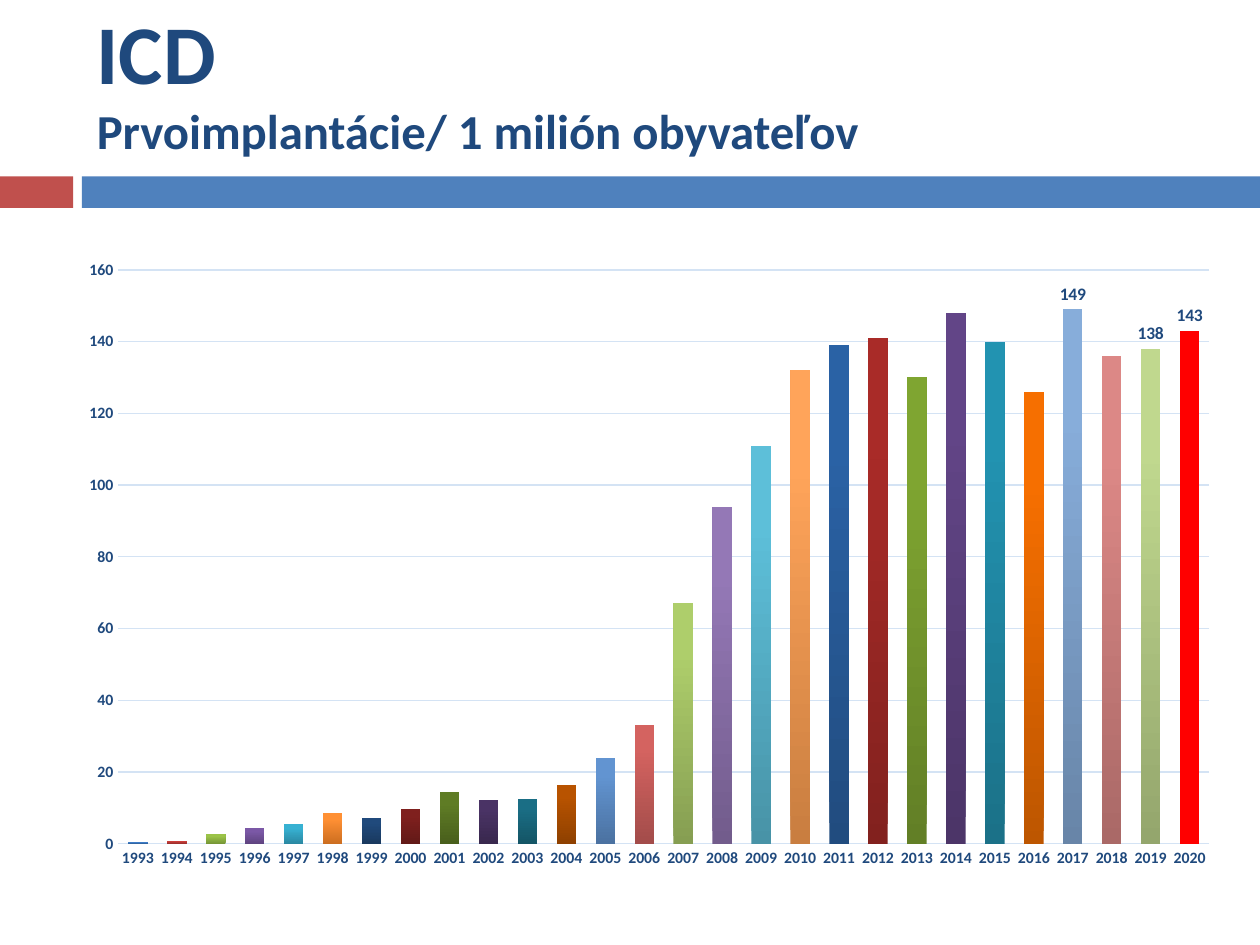
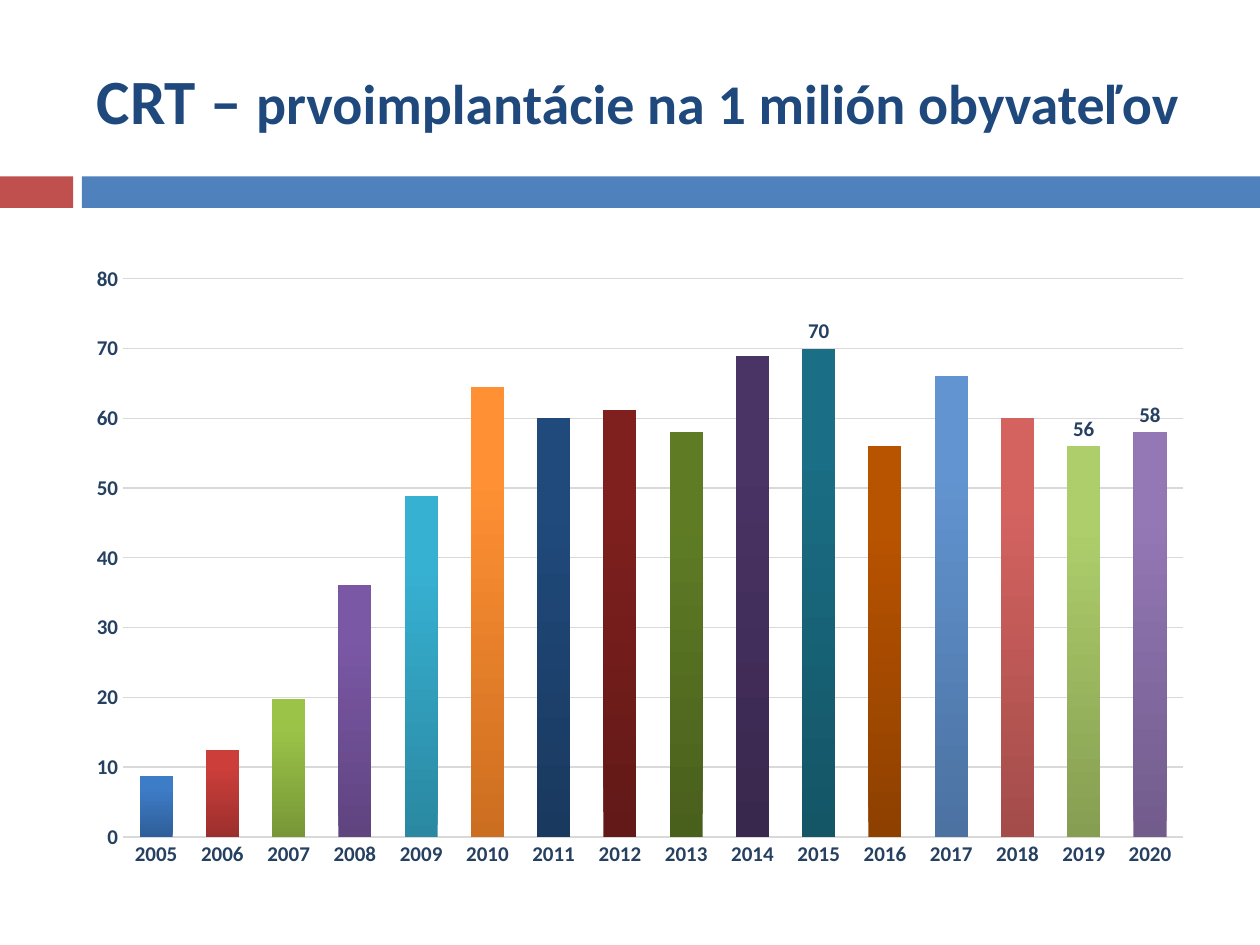
from lxml import etree
from pptx import Presentation
from pptx.chart.data import CategoryChartData
from pptx.dml.color import RGBColor
from pptx.enum.chart import XL_CHART_TYPE, XL_LABEL_POSITION, XL_TICK_MARK
from pptx.enum.shapes import MSO_SHAPE
from pptx.enum.text import MSO_ANCHOR, PP_ALIGN
from pptx.oxml.ns import qn
from pptx.util import Inches, Pt

COLUMNS = XL_CHART_TYPE.COLUMN_CLUSTERED
ABOVE = XL_LABEL_POSITION.OUTSIDE_END
NO_TICK = XL_TICK_MARK.NONE
RECTANGLE = MSO_SHAPE.RECTANGLE
MIDDLE = MSO_ANCHOR.MIDDLE
LEFT = PP_ALIGN.LEFT

# Shared look
FONT = "Calibri"
NAVY = "1F497D"
DARK_NAVY = "254061"
RED_BAND = "C0504D"
BLUE_BAND = "4F81BD"
LATEST_RED = "FF0000"

# Column gradients: bottom colour, top colour
COLUMN_SHADES = [
    ("2F5F99", "3D7CC7"), ("9C2F2D", "CB3E3A"), ("779737", "9BC348"),
    ("5F4480", "7B58A6"), ("2A88A2", "37B1D2"), ("CC6E20", "FF9034"),
    ("19395F", "204A7C"), ("621917", "7F201E"), ("495F1C", "5F7C25"),
    ("39284E", "4A3365"), ("145566", "1A6E85"), ("8E4000", "B85300"),
    ("4B72A1", "6294D1"), ("A34C4A", "D46360"), ("869E52", "AECE6B"),
    ("725C8C", "9478B6"), ("4893A7", "5DBFD9"), ("C97E40", "FFA45A"),
    ("214C7F", "2A62A5"), ("82211E", "A92B28"), ("627F26", "7FA531"),
    ("4C3568", "624587"), ("1B7188", "2293B1"), ("BD5600", "F66F00"),
    ("6885A8", "87ADDA"), ("AA6967", "DC8886"), ("94A66D", "C0D88E"),
]

# First implants per million inhabitants
ICD_START = 1993
ICD_RATES = [0.5, 0.9, 2.6, 4.3, 5.4, 8.5, 7.3, 9.8, 14.3, 12.2, 12.6, 16.5,
             24, 33, 67, 94, 111, 132, 139, 141, 130, 148, 140, 126, 149,
             136, 138, 143]
CRT_START = 2005
CRT_RATES = [8.7, 12.4, 19.7, 36.1, 48.8, 64.5, 60.1, 61.2, 58, 69, 70, 56,
             66, 60, 56, 58]


def rgb(hex_code):
    return RGBColor.from_string(hex_code)


def style_font(font, size, color):
    font.name = FONT
    font.size = Pt(size)
    font.bold = True
    font.color.rgb = rgb(color)


def add_band(slide, left, width, color):
    band = slide.shapes.add_shape(RECTANGLE, Inches(left), Inches(1.4),
                                  Inches(width), Inches(0.25))
    band.shadow.inherit = False
    band.fill.solid()
    band.fill.fore_color.rgb = rgb(color)
    band.line.fill.background()


def add_title(slide, top, height, parts, broken=False):
    """Write (text, size) parts, on separate lines if broken."""
    box = slide.shapes.add_textbox(Inches(0.67), Inches(top),
                                   Inches(9.16), Inches(height))
    frame = box.text_frame
    frame.word_wrap = True
    frame.vertical_anchor = MIDDLE
    heading = frame.paragraphs[0]
    heading.alignment = LEFT
    style_font(heading.font, parts[0][1], NAVY)
    for index, (text, size) in enumerate(parts):
        if broken and index:
            heading.add_line_break()
        run = heading.add_run()
        run.text = text
        run.font.size = Pt(size)


def add_slide(deck):
    slide = deck.slides.add_slide(deck.slide_layouts[6])
    add_band(slide, 0, 0.58, RED_BAND)
    add_band(slide, 0.65, 9.35, BLUE_BAND)
    return slide


def place_plot(chart, plot_box):
    """Fix the inner plot area as fractions of the chart."""
    area = chart._chartSpace.chart.plotArea
    for old in area.findall(qn("c:layout")):
        area.remove(old)
    layout = etree.Element(qn("c:layout"))
    manual = etree.SubElement(layout, qn("c:manualLayout"))
    settings = [("layoutTarget", "inner"), ("xMode", "edge"), ("yMode", "edge")]
    settings += zip("xywh", plot_box)
    for tag, value in settings:
        etree.SubElement(manual, qn(f"c:{tag}")).set("val", str(value))
    area.insert(0, layout)


def style_axes(chart, size, color, line_color, line_width, top, step):
    years, rates = chart.category_axis, chart.value_axis
    for axis in (years, rates):
        axis.major_tick_mark = axis.minor_tick_mark = NO_TICK
        style_font(axis.tick_labels.font, size, color)
    years.format.line.color.rgb = rgb(line_color)
    years.format.line.width = Pt(line_width)
    rates.format.line.fill.background()
    rates.minimum_scale, rates.maximum_scale = 0, top
    rates.major_unit = step
    rates.tick_labels.number_format = "0"
    rates.tick_labels.number_format_is_linked = False
    grid = rates.major_gridlines.format.line
    grid.color.rgb = rgb(line_color)
    grid.width = Pt(0.75)


def shade_column(column, bottom, top):
    column.format.fill.gradient()
    column.format.fill.gradient_angle = 90
    stops = column.format.fill.gradient_stops
    for stop, color, position in zip(stops, (bottom, top), (0, 0.8)):
        stop.color.rgb = rgb(color)
        stop.position = position


def add_rate_chart(slide, box, plot_box, start, rates, labelled, label_size,
                   color, **axes):
    data = CategoryChartData()
    data.categories = [str(start + i) for i in range(len(rates))]
    data.add_series("Series 1", rates)
    chart = slide.shapes.add_chart(COLUMNS, *map(Inches, box), data).chart
    chart.has_legend = chart.has_title = False
    style_font(chart.font, label_size, color)
    style_axes(chart, color=color, **axes)
    place_plot(chart, plot_box)

    plot = chart.plots[0]
    plot.vary_by_categories = False
    plot.gap_width, plot.overlap = 100, -24
    series = plot.series[0]
    series.data_labels.show_value = False
    for index, shades in enumerate(COLUMN_SHADES[:len(rates)]):
        shade_column(series.points[index], *shades)
    for year in labelled:
        label = series.points[year - start].data_label
        style_font(label.font, label_size, color)
        label.position = ABOVE
    return series


def main():
    deck = Presentation()
    deck.slide_width, deck.slide_height = Inches(10), Inches(7.5)

    # ICD
    icd = add_slide(deck)
    add_title(icd, 0.01, 1.25,
              [("ICD", 47.7), ("Prvoimplantácie/ 1 milión obyvateľov", 27.9)],
              broken=True)
    icd_series = add_rate_chart(
        icd, (0.12, 1.86, 9.76, 5.43), (0.084, 0.052, 0.887, 0.839),
        ICD_START, ICD_RATES, (2017, 2019, 2020), 10, NAVY,
        size=9, line_color="D4E3F4", line_width=0.75, top=160, step=20)
    latest = icd_series.points[len(ICD_RATES) - 1].format.fill
    latest.solid()
    latest.fore_color.rgb = rgb(LATEST_RED)

    # CRT
    crt = add_slide(deck)
    add_title(crt, 0.25, 1.08,
              [("CRT – ", 36), ("prvoimplantácie na 1 milión obyvateľov", 32)])
    add_rate_chart(
        crt, (0.59, 2.02, 8.98, 4.96), (0.043, 0.039, 0.937, 0.893),
        CRT_START, CRT_RATES, (2015, 2019, 2020), 12, DARK_NAVY,
        size=12, line_color="D9D9D9", line_width=1, top=80, step=10)

    deck.save("out.pptx")


if __name__ == "__main__":
    main()
